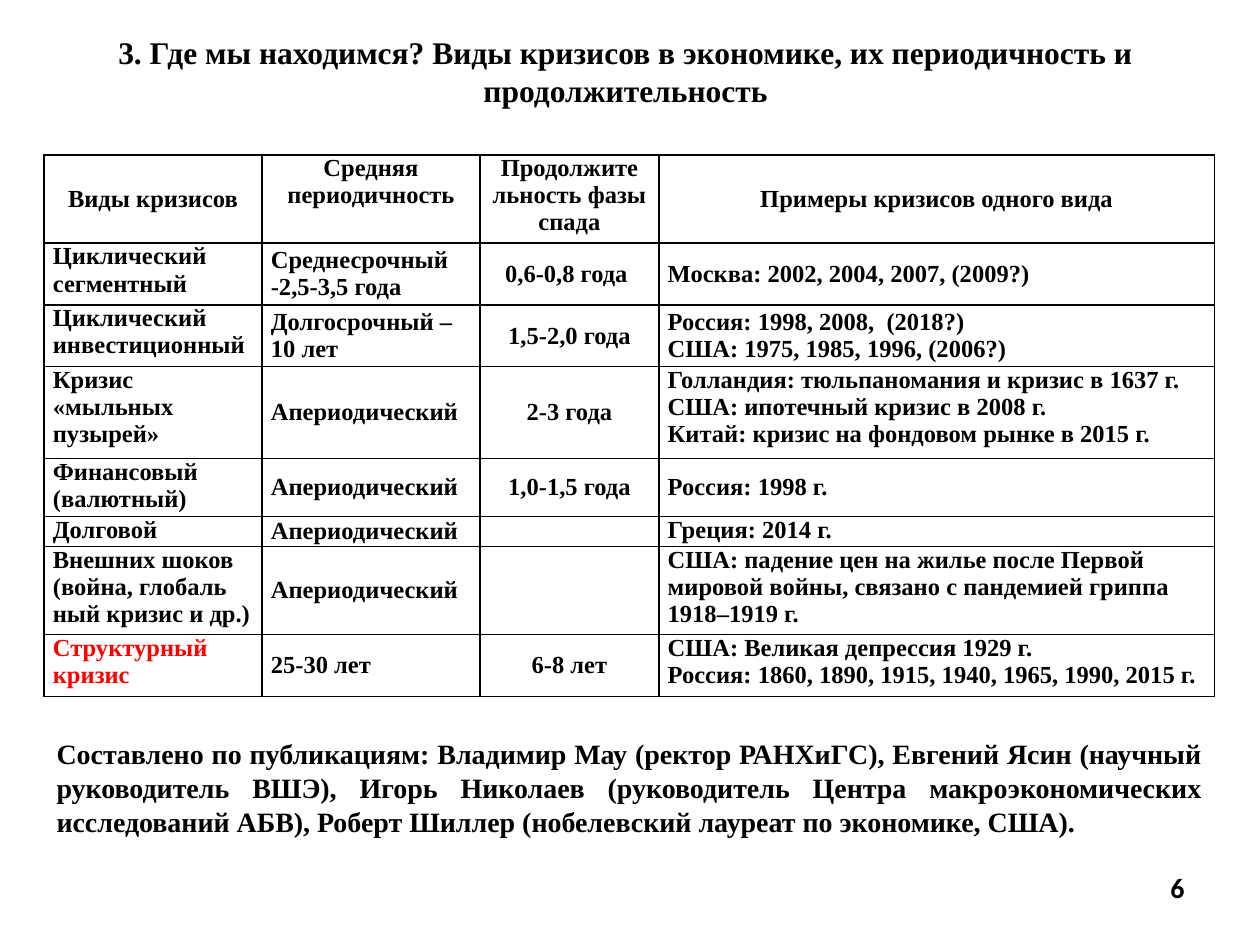
from dataclasses import dataclass

from lxml import etree
from pptx import Presentation
from pptx.dml.color import RGBColor
from pptx.enum.text import MSO_ANCHOR as Anchor, MSO_AUTO_SIZE as AutoSize, PP_ALIGN as Align
from pptx.oxml.ns import qn
from pptx.util import Inches, Pt


@dataclass(frozen=True)
class Theme:
    ink: RGBColor = RGBColor(0, 0, 0)
    accent: RGBColor = RGBColor(255, 0, 0)
    serif: str = "Times New Roman"
    sans: str = "Calibri"
    title: int = 18
    note: int = 16
    body: int = 14
    border: int = 1


THEME = Theme()
TOP, MIDDLE = Anchor.TOP, Anchor.MIDDLE

TITLE = "3. Где мы находимся? Виды кризисов в экономике, их периодичность и продолжительность"
SOURCES = (
    "Составлено по публикациям: Владимир Мау (ректор РАНХиГС), Евгений Ясин "
    "(научный руководитель ВШЭ), Игорь Николаев (руководитель Центра "
    "макроэкономических исследований АБВ), Роберт Шиллер "
    "(нобелевский лауреат по экономике, США)."
)

HEADINGS = ["Виды кризисов", "Средняя периодичность", "Продолжите льность фазы спада",
            "Примеры кризисов одного вида"]
HEADING_ANCHORS = [MIDDLE, TOP, TOP, MIDDLE]
COLUMN_WIDTHS = [1.73, 1.73, 1.42, 4.41]
COLUMN_ALIGNS = [Align.LEFT, Align.LEFT, Align.CENTER, Align.LEFT]
HEADING_HEIGHT = 0.7

CRISES = [
    (0.49, MIDDLE, ["Циклический сегментный", "Среднесрочный -2,5-3,5 года", "0,6-0,8 года ",
                    "Москва: 2002, 2004, 2007, (2009?)"]),
    (0.49, MIDDLE, ["Циклический инвестиционный", "Долгосрочный – 10 лет", "1,5-2,0 года",
                    "Россия: 1998, 2008,  (2018?)\nСША: 1975, 1985, 1996, (2006?)"]),
    (0.73, TOP, ["Кризис «мыльных пузырей»", "Апериодический", "2-3 года",
                 "Голландия: тюльпаномания и кризис в 1637 г.\n"
                 "США: ипотечный кризис в 2008 г.\n"
                 "Китай: кризис на фондовом рынке в 2015 г."]),
    (0.46, MIDDLE, ["Финансовый (валютный)", "Апериодический", "1,0-1,5 года",
                    "Россия: 1998 г."]),
    (0.23, TOP, ["Долговой", "Апериодический", "", "Греция: 2014 г."]),
    (0.7, TOP, ["Внешних шоков (война, глобаль ный кризис и др.)", "Апериодический", "",
                "США: падение цен на жилье после Первой мировой войны, "
                "связано с пандемией гриппа 1918–1919 г."]),
    (0.49, TOP, ["Структурный кризис", "25-30 лет", "6-8 лет",
                 "США: Великая депрессия 1929 г.\n"
                 "Россия: 1860, 1890, 1915, 1940, 1965, 1990, 2015 г."]),
]
HIGHLIGHTED = "Структурный кризис"


def write(frame, text, size, align, color=THEME.ink, face=THEME.serif):
    frame.word_wrap = True
    for index, line in enumerate(text.split("\n")):
        paragraph = frame.add_paragraph() if index else frame.paragraphs[0]
        paragraph.alignment = align
        if not line:
            etree.SubElement(paragraph._p, qn("a:endParaRPr"), sz=str(size * 100))
            continue
        run = paragraph.add_run()
        run.text = line
        run.font.size = Pt(size)
        run.font.name = face
        run.font.bold = True
        run.font.color.rgb = color


def add_title(slide, text):
    title = slide.shapes.title
    title.left, title.top = Inches(0.12), Inches(0.21)
    title.width, title.height = Inches(9.69), Inches(0.71)
    title.text_frame.auto_size = AutoSize.NONE
    title.text_frame.vertical_anchor = TOP
    write(title.text_frame, text, THEME.title, Align.CENTER)


def add_text(slide, text, left, top, width, height, align, anchor=TOP, face=THEME.serif):
    box = slide.shapes.add_textbox(Inches(left), Inches(top), Inches(width), Inches(height))
    box.text_frame.vertical_anchor = anchor
    write(box.text_frame, text, THEME.note, align, face=face)


def outline(cell):
    properties = cell._tc.get_or_add_tcPr()
    for position, side in enumerate(("lnL", "lnR", "lnT", "lnB")):
        line = etree.Element(qn(f"a:{side}"), w=str(Pt(THEME.border)))
        fill = etree.SubElement(line, qn("a:solidFill"))
        etree.SubElement(fill, qn("a:srgbClr"), val=str(THEME.ink))
        properties.insert(position, line)


def fill_cell(cell, text, align, anchor):
    cell.margin_left = cell.margin_right = Inches(0.07)
    cell.margin_top = cell.margin_bottom = 0
    cell.vertical_anchor = anchor
    cell.fill.background()
    outline(cell)
    color = THEME.accent if text == HIGHLIGHTED else THEME.ink
    write(cell.text_frame, text, THEME.body, align, color)


def add_crisis_table(slide):
    heights = [HEADING_HEIGHT] + [height for height, _, _ in CRISES]
    table = slide.shapes.add_table(
        len(heights), len(COLUMN_WIDTHS), Inches(0.35), Inches(1.23),
        Inches(sum(COLUMN_WIDTHS)), Inches(sum(heights))).table
    table.first_row = table.horz_banding = False
    for column, width in zip(table.columns, COLUMN_WIDTHS):
        column.width = Inches(width)
    for row, height in zip(table.rows, heights):
        row.height = Inches(height)

    for col, (heading, anchor) in enumerate(zip(HEADINGS, HEADING_ANCHORS)):
        fill_cell(table.cell(0, col), heading, Align.CENTER, anchor)
    for row, (height, examples_anchor, texts) in enumerate(CRISES, start=1):
        anchors = [TOP, MIDDLE, MIDDLE, examples_anchor]
        for col, (text, align, anchor) in enumerate(zip(texts, COLUMN_ALIGNS, anchors)):
            fill_cell(table.cell(row, col), text, align, anchor)


def main():
    deck = Presentation()
    deck.slide_width, deck.slide_height = Inches(10), Inches(7.5)
    slide = deck.slides.add_slide(deck.slide_layouts[5])
    add_title(slide, TITLE)
    add_crisis_table(slide)
    add_text(slide, SOURCES, 0.35, 5.8, 9.29, 0.91, Align.JUSTIFY)
    add_text(slide, "6", 7.17, 6.74, 2.33, 0.61, Align.RIGHT, MIDDLE, THEME.sans)
    deck.save("out.pptx")


if __name__ == "__main__":
    main()
